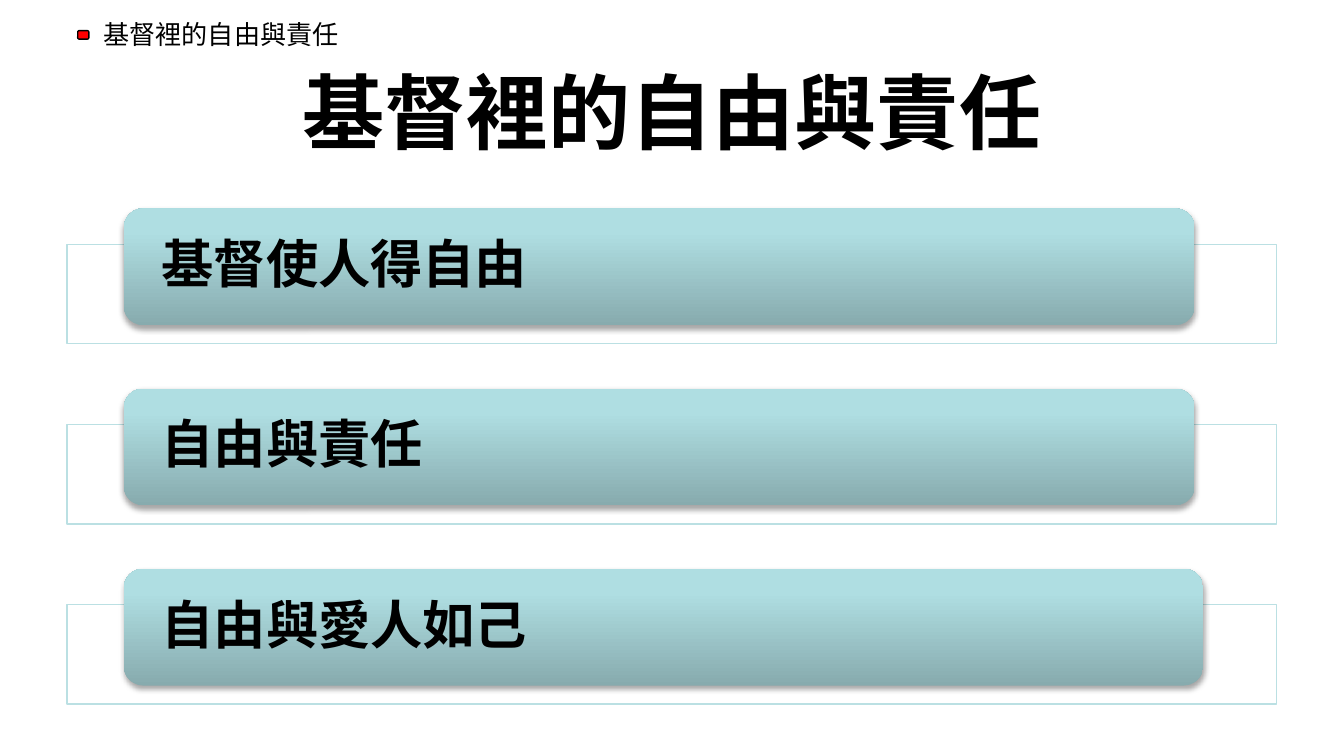
from copy import deepcopy
from dataclasses import dataclass

from lxml import etree
from pptx import Presentation
from pptx.dml.color import RGBColor
from pptx.enum.shapes import MSO_SHAPE
from pptx.enum.text import MSO_ANCHOR, MSO_AUTO_SIZE, PP_ALIGN
from pptx.oxml.ns import qn
from pptx.util import Cm, Pt

RECTANGLE = MSO_SHAPE.RECTANGLE
ROUNDED = MSO_SHAPE.ROUNDED_RECTANGLE
MIDDLE = MSO_ANCHOR.MIDDLE
GROW = MSO_AUTO_SIZE.SHAPE_TO_FIT_TEXT
LEFT, CENTER = PP_ALIGN.LEFT, PP_ALIGN.CENTER
TITLE_ONLY = 5


@dataclass(frozen=True)
class Theme:
    """Colours, font and type sizes of the slide."""
    font: str = "Lato"
    text: str = "000000"
    paper: str = "FFFFFF"
    marker: str = "FF0000"
    frame: str = "BBE0E3"
    gradient: tuple = ((0, "87ABAE"), (0.8, "AFDEE2"), (1, "AFE0E4"))
    header_size: int = 14
    title_size: int = 44
    topic_size: int = 28
    line_width: float = 0.75


THEME = Theme()
TITLE = "基督裡的自由與責任"
TOPICS = (("基督使人得自由", 20.24), ("自由與責任", 20.24), ("自由與愛人如己", 20.4))


def place(shape, box):
    """Move and size a shape to a box given in centimetres."""
    shape.left, shape.top, shape.width, shape.height = map(Cm, box)


def write(shape, text, size, bold=False, align=LEFT):
    """Put one formatted paragraph in a shape and return it."""
    frame = shape.text_frame
    frame.word_wrap = True
    frame.text = text
    paragraph = frame.paragraphs[0]
    paragraph.alignment = align
    font = paragraph.font
    font.name, font.size, font.bold = THEME.font, Pt(size), bold
    font.color.rgb = RGBColor.from_string(THEME.text)
    properties = paragraph._p.pPr.find(qn("a:defRPr"))
    etree.SubElement(properties, qn("a:ea"), typeface=THEME.font)
    return paragraph


def add_outlined(shapes, kind, box, fill, line):
    """Add a flat shape with a solid fill and a thin outline."""
    shape = shapes.add_shape(kind, *map(Cm, box))
    shape.shadow.inherit = False
    shape.fill.solid()
    shape.fill.fore_color.rgb = RGBColor.from_string(fill)
    shape.line.color.rgb = RGBColor.from_string(line)
    shape.line.width = Pt(THEME.line_width)
    return shape


def set_gradient(shape):
    """Fill a shape with the theme gradient, rising from its bottom."""
    shape.fill.gradient()
    shape.fill.gradient_angle = 90
    stop_list = shape._element.spPr.find(".//" + qn("a:gsLst"))
    stop_list.append(deepcopy(stop_list[0]))
    for stop, (position, color) in zip(shape.fill.gradient_stops, THEME.gradient):
        stop.position = position
        stop.color.rgb = RGBColor.from_string(color)


def set_soft_shadow(shape):
    """Give a shape a soft shadow that falls straight down."""
    shape.shadow.inherit = False
    effects = shape._element.spPr.find(qn("a:effectLst"))
    shadow = etree.SubElement(effects, qn("a:outerShdw"), blurRad="40000",
                              dist="23000", dir="5400000", rotWithShape="0")
    color = etree.SubElement(shadow, qn("a:srgbClr"), val=THEME.text)
    etree.SubElement(color, qn("a:alpha"), val="35000")


def add_header(slide, box):
    """Add the running header with its red marker."""
    left, top, width, height = box
    label = slide.shapes.add_textbox(*map(Cm, (left + 0.23, top, width - 0.23, height)))
    write(label, TITLE, THEME.header_size)
    label.text_frame.auto_size = GROW
    add_outlined(slide.shapes, ROUNDED, (left, top + 0.35, 0.21, 0.16),
                 THEME.marker, THEME.text)


def add_title(slide, box):
    """Move and format the title placeholder."""
    title = slide.shapes.title
    place(title, box)
    write(title, TITLE, THEME.title_size, True, CENTER)
    title.text_frame.vertical_anchor = MIDDLE


def add_topic(shapes, box, text, bar_width):
    """Add one topic bar overlapping its outlined frame."""
    left, top, width, height = box
    frame = add_outlined(shapes, RECTANGLE, (left, top + 0.68, width, height - 0.68),
                         THEME.paper, THEME.frame)
    color = frame._element.spPr.find(qn("a:solidFill"))[0]
    etree.SubElement(color, qn("a:alpha"), val="90000")

    bar = shapes.add_shape(ROUNDED, *map(Cm, (left + 1.07, top, bar_width, 2.21)))
    set_gradient(bar)
    bar.line.fill.background()
    set_soft_shadow(bar)
    paragraph = write(bar, text, THEME.topic_size, True)
    paragraph.line_spacing = 0.9
    text_frame = bar.text_frame
    text_frame.vertical_anchor = MIDDLE
    text_frame.margin_left = text_frame.margin_right = Cm(0.61)
    text_frame.margin_top = text_frame.margin_bottom = 0


def add_topic_list(slide, box):
    """Spread the topics evenly down a box, in one group."""
    left, top, width, height = box
    group = slide.shapes.add_group_shape()
    row_height = 2.56
    pitch = (height - row_height) / (len(TOPICS) - 1)
    for index, (text, bar_width) in enumerate(TOPICS):
        row = (left, top + index * pitch, width, row_height)
        add_topic(group.shapes, row, text, bar_width)


def main():
    """Build and save the slide."""
    presentation = Presentation()
    presentation.slide_width, presentation.slide_height = Cm(25.4), Cm(14.29)
    slide = presentation.slides.add_slide(presentation.slide_layouts[TITLE_ONLY])
    add_header(slide, (1.47, 0.23, 10.59, 0.86))
    add_title(slide, (1.27, 0.89, 22.86, 2.39))
    add_topic_list(slide, (1.27, 3.94, 22.86, 9.37))
    presentation.save("out.pptx")


if __name__ == "__main__":
    main()
